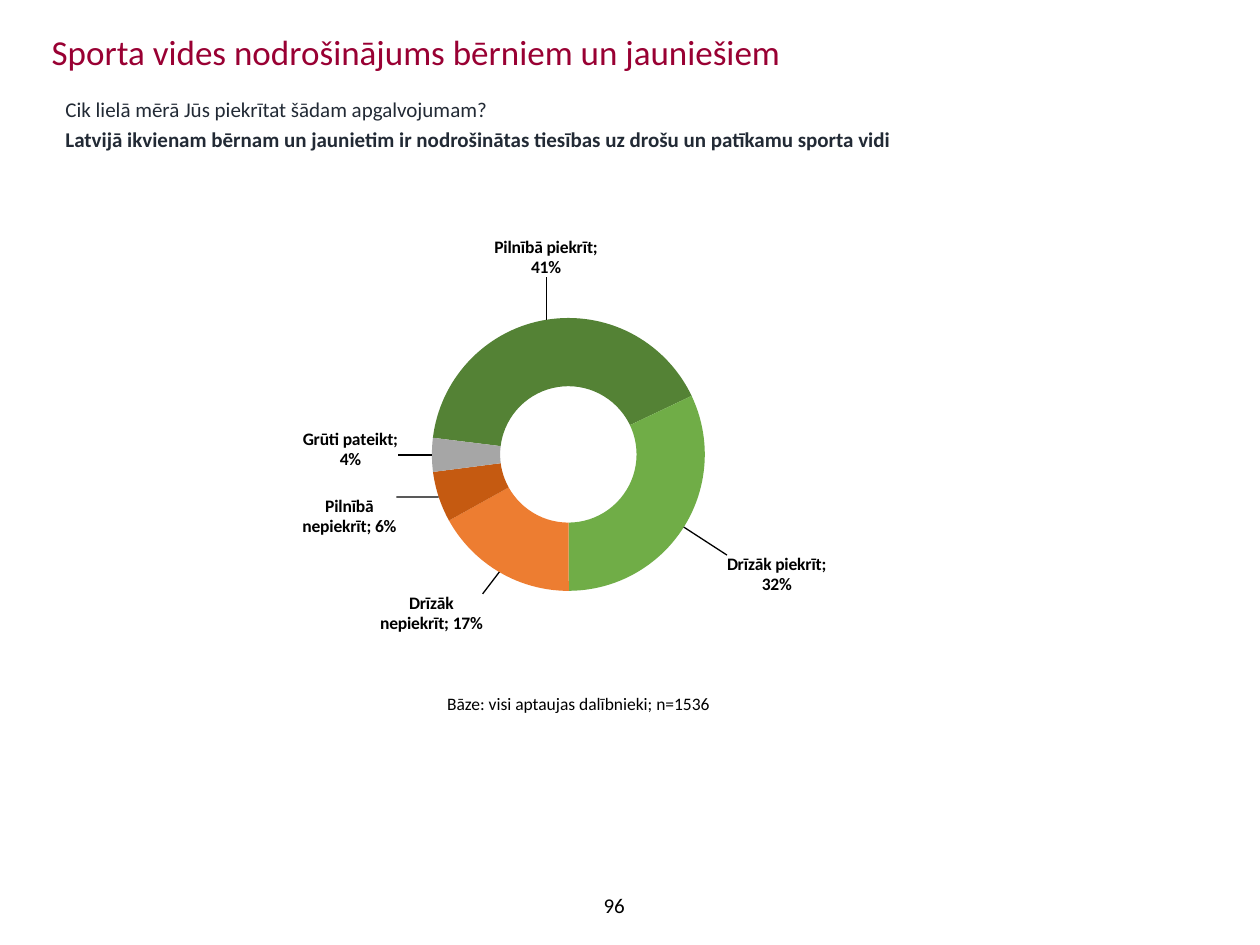
from dataclasses import dataclass

from lxml.etree import SubElement
from pptx import Presentation
from pptx.chart.data import CategoryChartData
from pptx.dml.color import RGBColor
from pptx.enum.chart import XL_CHART_TYPE
from pptx.enum.text import MSO_ANCHOR, MSO_AUTO_SIZE, PP_ALIGN
from pptx.oxml import parse_xml
from pptx.oxml.ns import nsdecls, qn
from pptx.util import Pt


@dataclass(frozen=True)
class Theme:
    font: str = "Calibri"
    heading: str = "990033"
    question: str = "222A35"
    text: str = "000000"
    title_size: int = 20
    body_size: int = 12
    small_size: int = 10


theme = Theme()

TITLE = "Sporta vides nodrošinājums bērniem un jauniešiem"
QUESTION = [
    ("Cik lielā mērā Jūs piekrītat šādam apgalvojumam?", False),
    ("Latvijā ikvienam bērnam un jaunietim ir nodrošinātas tiesības uz drošu un patīkamu sporta vidi", True),
]
ANSWERS = [
    ("Pilnībā piekrīt", 0.41, "548235", (-0.01, -0.19)),
    ("Drīzāk piekrīt", 0.32, "70AD47", (0.2, 0.13)),
    ("Drīzāk nepiekrīt", 0.17, "ED7D31", (-0.14, 0.14)),
    ("Pilnībā nepiekrīt", 0.06, "C55A11", (-0.2, 0.06)),
    ("Grūti pateikt", 0.04, "A6A6A6", (-0.19, -0.01)),
]
BASE = "Bāze: visi aptaujas dalībnieki; n=1536"
PAGE_NUMBER = "96"

TITLE_AREA = (22.3, 11.5, 674.6, 35.3)
QUESTION_AREA = (30.2, 51.8, 666.7, 64.8)
CHART_AREA = (147.6, 122.4, 347.8, 289.4)
BASE_AREA = (248.4, 392.4, 166.3, 19.4)
NUMBER_AREA = (267.1, 502.6, 167.8, 28.8)
PLOT_AREA = {"x": 0.25, "y": 0.205, "w": 0.519, "h": 0.539}
START_ANGLE = 277
HOLE_SIZE = 40


def place(shape, area):
    shape.left, shape.top, shape.width, shape.height = map(Pt, area)


def write(para, text, size=theme.body_size, color=theme.text, bold=False, align=PP_ALIGN.LEFT, before=0):
    para.alignment = align
    para.space_before = Pt(before)
    span = para.add_run()
    span.text = text
    span.font.name = theme.font
    span.font.size = Pt(size)
    span.font.bold = bold
    span.font.color.rgb = RGBColor.from_string(color)


def add_text(page, area, text, anchor=MSO_ANCHOR.TOP, wrap=True, **text_format):
    box = page.shapes.add_textbox(*map(Pt, area))
    box.text_frame.word_wrap = wrap
    box.text_frame.vertical_anchor = anchor
    write(box.text_frame.paragraphs[0], text, **text_format)


def label_xml():
    font = f'<a:latin typeface="{theme.font}"/>'
    fill = f'<a:solidFill><a:srgbClr val="{theme.text}"/></a:solidFill>'
    style = (
        '<c:numFmt formatCode="0%" sourceLinked="0"/><c:spPr><a:noFill/><a:ln><a:noFill/></a:ln></c:spPr>'
        f'<c:txPr><a:bodyPr/><a:p><a:pPr><a:defRPr sz="{theme.small_size * 100}" b="1">{fill}{font}'
        '</a:defRPr></a:pPr><a:endParaRPr lang="lv-LV"/></a:p></c:txPr>'
        '<c:showLegendKey val="0"/><c:showVal val="1"/><c:showCatName val="1"/><c:showSerName val="0"/>'
        '<c:showPercent val="0"/><c:showBubbleSize val="0"/><c:separator>; </c:separator>'
    )
    labels = "".join(
        f'<c:dLbl><c:idx val="{index}"/><c:layout><c:manualLayout><c:x val="{x}"/><c:y val="{y}"/>'
        f"</c:manualLayout></c:layout>{style}</c:dLbl>"
        for index, (_, _, _, (x, y)) in enumerate(ANSWERS)
    )
    return (
        f'<c:dLbls {nsdecls("c", "a")}>{labels}{style}<c:showLeaderLines val="1"/>'
        f'<c:leaderLines><c:spPr><a:ln w="9525">{fill}</a:ln></c:spPr></c:leaderLines></c:dLbls>'
    )


def set_plot_layout(chart):
    plot_area = chart._chartSpace.find(".//" + qn("c:plotArea"))
    for layout in plot_area.findall(qn("c:layout")):
        plot_area.remove(layout)
    layout = SubElement(plot_area, qn("c:layout"))
    manual = SubElement(layout, qn("c:manualLayout"))
    settings = {"layoutTarget": "inner", "xMode": "edge", "yMode": "edge", **PLOT_AREA}
    for name, value in settings.items():
        SubElement(manual, qn(f"c:{name}")).set("val", str(value))
    plot_area.insert(0, layout)


def add_doughnut(page):
    data = CategoryChartData(number_format="0%")
    data.categories = [name for name, *_ in ANSWERS]
    data.add_series("Series 1", [value for _, value, *_ in ANSWERS])
    chart = page.shapes.add_chart(XL_CHART_TYPE.DOUGHNUT, *map(Pt, CHART_AREA), data).chart
    chart.has_title = False
    chart.has_legend = False
    chart.font.name = theme.font
    chart.font.size = Pt(theme.small_size)
    chart.font.color.rgb = RGBColor.from_string(theme.text)
    plot = chart.plots[0]
    plot.vary_by_categories = True
    series = plot.series[0]
    for index, (_, _, color, _) in enumerate(ANSWERS):
        look = series.points[index].format
        look.fill.solid()
        look.fill.fore_color.rgb = RGBColor.from_string(color)
        look.line.fill.background()
    series._element.find(qn("c:cat")).addprevious(parse_xml(label_xml()))
    for name, value in (("firstSliceAng", START_ANGLE), ("holeSize", HOLE_SIZE)):
        chart._chartSpace.find(".//" + qn(f"c:{name}")).set("val", str(value))
    set_plot_layout(chart)


def main():
    deck = Presentation()
    deck.slide_width, deck.slide_height = Pt(720), Pt(540)
    page = deck.slides.add_slide(deck.slide_layouts[1])

    title = page.shapes.title
    place(title, TITLE_AREA)
    title.text_frame.auto_size = MSO_AUTO_SIZE.NONE
    write(title.text_frame.paragraphs[0], TITLE, size=theme.title_size, color=theme.heading)

    body = page.placeholders[1]
    place(body, QUESTION_AREA)
    frame = body.text_frame
    frame.auto_size = MSO_AUTO_SIZE.NONE
    for index, (text, bold) in enumerate(QUESTION):
        para = frame.add_paragraph() if index else frame.paragraphs[0]
        properties = para._p.get_or_add_pPr()
        properties.set("marL", "0")
        properties.set("indent", "0")
        SubElement(properties, qn("a:buNone"))
        write(para, text, color=theme.question, bold=bold, before=2.4 if index else 0)

    add_doughnut(page)
    add_text(page, BASE_AREA, BASE, size=theme.small_size, wrap=False)
    add_text(page, NUMBER_AREA, PAGE_NUMBER, anchor=MSO_ANCHOR.MIDDLE, align=PP_ALIGN.CENTER)
    deck.save("out.pptx")


if __name__ == "__main__":
    main()
